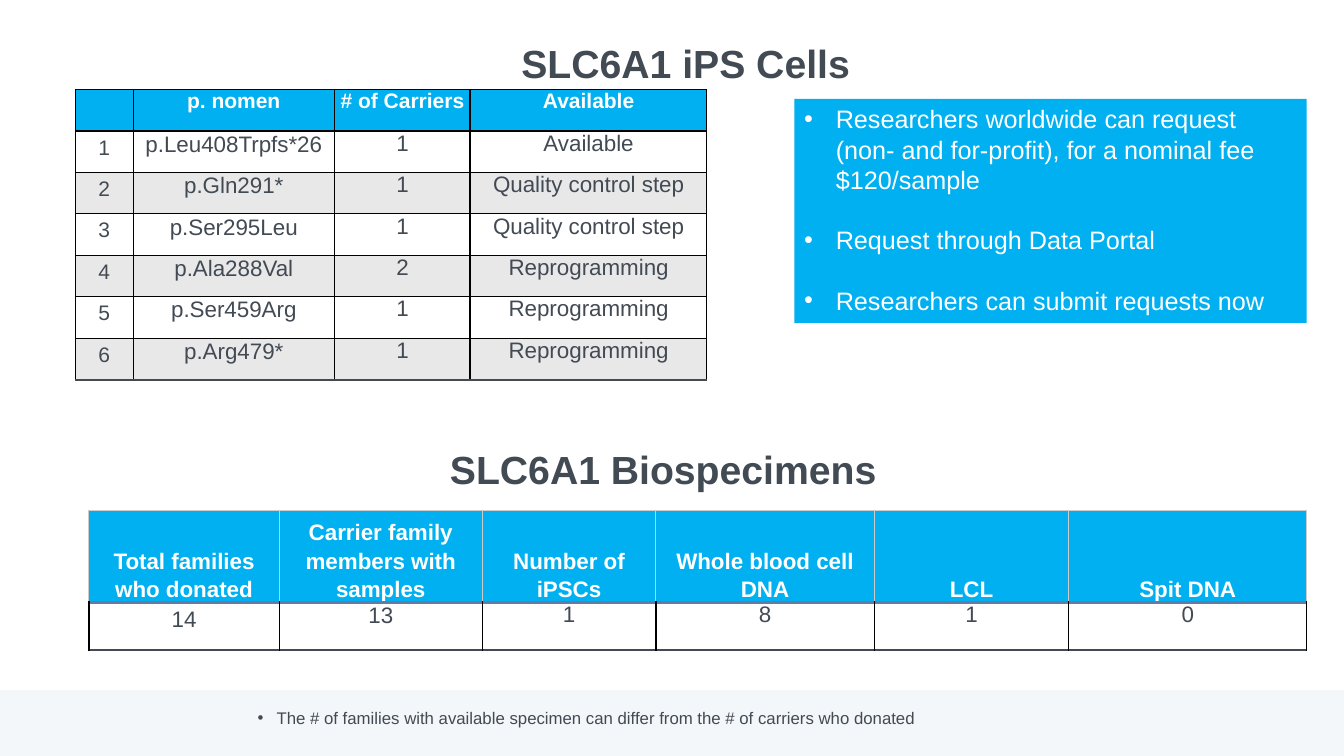
from lxml.etree import SubElement
from pptx import Presentation
from pptx.dml.color import RGBColor
from pptx.enum.shapes import MSO_SHAPE as Shape
from pptx.enum.text import MSO_ANCHOR as Anchor, MSO_AUTO_SIZE as AutoSize, PP_ALIGN as Align
from pptx.oxml import parse_xml
from pptx.oxml.ns import nsdecls, qn
from pptx.util import Pt

COLORS = {
    "white": "FFFFFF", "blue": "00B0F0", "ink": "424A54", "stripe": "E8E8E9",
    "band": "F4F7F9", "black": "000000", "silver": "CCCCCC", "slate": "657BA3",
}
HEADING = {"size": 28, "color": "ink", "bold": True}
NUMBER_MARGINS = (7.2, 3.6, 7.2, 3.6)
NAME_MARGINS = (0.7, 0.7, 0.7, 0)
VALUE_MARGINS = (3.6, 0, 3.6, 0)


def color(name):
    return RGBColor.from_string(COLORS[name])


class SlideBuilder:
    def __init__(self, slide, font="Arial"):
        self.slide = slide
        self.font = font

    def style(self, paragraph, size, color_name="ink", bold=False, **layout):
        for name, value in layout.items():
            setattr(paragraph, name, value)
        formats = {"name": self.font, "size": Pt(size), "bold": bold}
        for name, value in formats.items():
            setattr(paragraph.font, name, value)
        paragraph.font.color.rgb = color(color_name)

    def margins(self, target, values):
        for side, value in zip(("left", "top", "right", "bottom"), values):
            setattr(target, f"margin_{side}", Pt(value))

    def rectangle(self, left, top, width, height, fill):
        shape = self.slide.shapes.add_shape(
            Shape.RECTANGLE, Pt(left), Pt(top), Pt(width), Pt(height))
        shape.shadow.inherit = False
        shape.fill.solid()
        shape.fill.fore_color.rgb = color(fill)
        shape.line.fill.background()
        return shape

    def text_box(self, left, top, width, height):
        return self.slide.shapes.add_textbox(Pt(left), Pt(top), Pt(width), Pt(height))

    def heading(self, shape, text, left, top, width, height):
        for name, value in {"left": left, "top": top, "width": width, "height": height}.items():
            setattr(shape, name, Pt(value))
        frame = shape.text_frame
        frame.text = text
        frame.word_wrap = True
        frame.auto_size = AutoSize.NONE
        frame.vertical_anchor = Anchor.TOP
        self.margins(frame, (0, 0, 0, 0))
        self.style(frame.paragraphs[0], HEADING["size"], HEADING["color"], HEADING["bold"],
                   alignment=Align.CENTER, line_spacing=0.9)

    def bullets(self, shape, items, size, color_name, indent, gap=0):
        frame = shape.text_frame
        frame.word_wrap = True
        frame.vertical_anchor = Anchor.TOP
        self.margins(frame, NUMBER_MARGINS)
        for index, item in enumerate(items):
            paragraph = frame.paragraphs[0] if index == 0 else frame.add_paragraph()
            paragraph.text = item
            properties = paragraph._p.get_or_add_pPr()
            properties.set("marL", str(Pt(indent)))
            properties.set("indent", str(-Pt(indent)))
            bullet_color = SubElement(properties, qn("a:buClr"))
            SubElement(bullet_color, qn("a:srgbClr"), val=COLORS[color_name])
            SubElement(properties, qn("a:buFont"), typeface=self.font)
            SubElement(properties, qn("a:buChar"), char="•")
            self.style(paragraph, size, color_name, alignment=Align.LEFT,
                       space_before=Pt(gap if index else 0))

    def borders(self, cell, lines):
        """Draw left, right, top and bottom lines, each a colour name and a width."""
        properties = cell._tc.get_or_add_tcPr()
        for position, (side, (color_name, width)) in enumerate(zip("LRTB", lines)):
            properties.insert(position, parse_xml(
                f'<a:ln{side} {nsdecls("a")} w="{Pt(width)}"><a:solidFill>'
                f'<a:srgbClr val="{COLORS[color_name]}"/></a:solidFill></a:ln{side}>'))

    def table(self, left, top, widths, heights, rows, rules, header, thick_edges,
              index_size=16):
        """Rules are the horizontal lines from top to bottom; thick_edges number the vertical ones."""
        graphic = self.slide.shapes.add_table(
            len(rows), len(widths), Pt(left), Pt(top), Pt(sum(widths)), Pt(sum(heights)))
        table = graphic.table
        for column, width in zip(table.columns, widths):
            column.width = Pt(width)
        for row, height in zip(table.rows, heights):
            row.height = Pt(height)
        for r, values in enumerate(rows):
            line_color = "black" if r else header["lines"]
            edges = [(line_color, 1.5 if edge in thick_edges and line_color == "black" else 0.75)
                     for edge in range(len(widths) + 1)]
            fill = "blue" if r == 0 else "white" if r % 2 else "stripe"
            for c, value in enumerate(values):
                cell = table.cell(r, c)
                cell.text = value
                cell.fill.solid()
                cell.fill.fore_color.rgb = color(fill)
                self.borders(cell, (edges[c], edges[c + 1], rules[r], rules[r + 1]))
                paragraph = cell.text_frame.paragraphs[0]
                if r == 0:
                    cell.vertical_anchor = header["anchor"]
                    self.margins(cell, header["margins"])
                    self.style(paragraph, header["size"], "white", True,
                               alignment=Align.CENTER, line_spacing=header["spacing"])
                else:
                    self.margins(cell, (NUMBER_MARGINS, NAME_MARGINS)[c] if c < 2 else VALUE_MARGINS)
                    self.style(paragraph, 16 if c else index_size, alignment=Align.CENTER)


def main():
    presentation = Presentation()
    presentation.slide_width, presentation.slide_height = Pt(960), Pt(540)
    slide = presentation.slides.add_slide(presentation.slide_layouts[5])
    builder = SlideBuilder(slide)

    builder.rectangle(0, 493, 960, 47, "band")
    builder.heading(slide.shapes.title, "SLC6A1 iPS Cells", 48, 31.7, 883.4, 62)

    cell_lines = [
        ("p.Leu408Trpfs*26", "1", "Available"),
        ("p.Gln291*", "1", "Quality control step"),
        ("p.Ser295Leu", "1", "Quality control step"),
        ("p.Ala288Val", "2", "Reprogramming"),
        ("p.Ser459Arg", "1", "Reprogramming"),
        ("p.Arg479*", "1", "Reprogramming"),
    ]
    builder.table(
        54, 64, (41, 144, 97, 169), [29.6] * 7,
        [("", "p. nomen", "# of Carriers", "Available")]
        + [(str(number), *line) for number, line in enumerate(cell_lines, 1)],
        [("black", 0.75), ("black", 1.5)] + [("black", 0.75)] * 5 + [("ink", 1.5)],
        {"size": 15, "anchor": Anchor.TOP, "margins": VALUE_MARGINS, "spacing": 1.0,
         "lines": "black"},
        {3}, index_size=15)

    requests = builder.rectangle(567.4, 70.6, 366, 160, "blue")
    builder.bullets(requests, [
        "Researchers worldwide can request (non- and for-profit), for a nominal fee $120/sample",
        "Request through Data Portal",
        "Researchers can submit requests now",
    ], 18, "white", 22.5, gap=21.5)

    builder.heading(builder.text_box(0, 0, 10, 10), "SLC6A1 Biospecimens", 32, 322, 883.4, 40)
    builder.table(
        63.5, 364.3, (136, 145, 124, 156, 139, 170), (66, 34),
        [("Total families who donated", "Carrier family members with samples",
          "Number of iPSCs", "Whole blood cell DNA", "LCL", "Spit DNA"),
         ("14", "13", "1", "8", "1", "0")],
        [("silver", 0.75), ("slate", 2.25), ("ink", 1.5)],
        {"size": 16, "anchor": Anchor.BOTTOM, "margins": (0, 0, 0, 0), "spacing": 1.15,
         "lines": "silver"},
        {0, 3})

    builder.bullets(builder.text_box(177, 502, 780, 22), [
        "The # of families with available specimen can differ from the # of carriers who donated",
    ], 12, "ink", 13.5)

    presentation.save("out.pptx")


if __name__ == "__main__":
    main()
